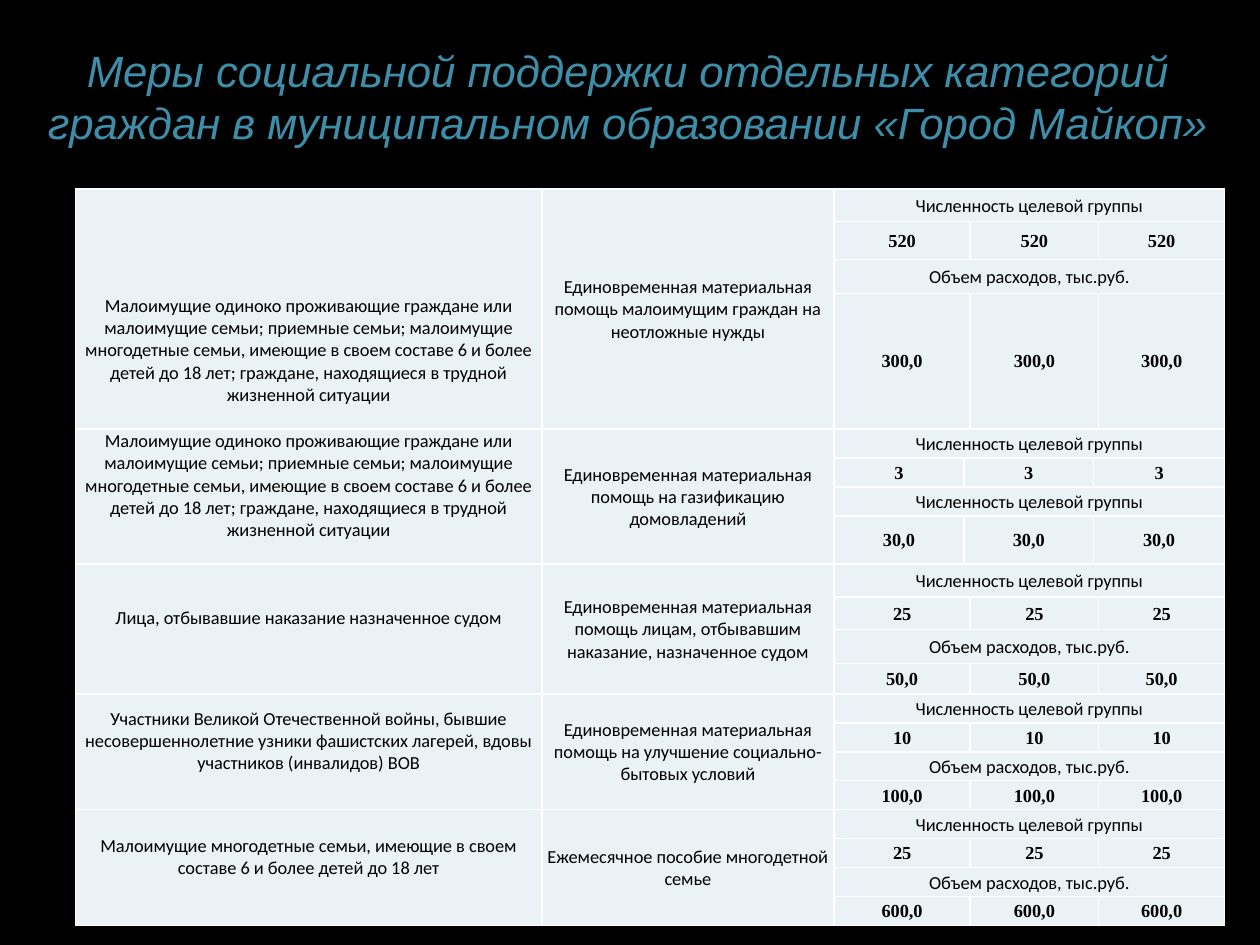
"""Build a slide with a table of social support measures in a municipality."""
from lxml import etree
from pptx import Presentation
from pptx.dml.color import RGBColor
from pptx.enum.text import MSO_ANCHOR, PP_ALIGN
from pptx.oxml.ns import qn
from pptx.util import Inches, Pt

MIDDLE, BOTTOM = MSO_ANCHOR.MIDDLE, MSO_ANCHOR.BOTTOM
CENTER = PP_ALIGN.CENTER
TITLE_ONLY = 5

COLORS = {"page": "000000", "title": "3E8EA9", "outline": "295F71",
          "cell": "EBF2F5", "border": "FFFFFF", "text": "000000"}
TITLE = ("Меры социальной поддержки отдельных категорий граждан "
         "в муниципальном образовании «Город Майкоп»")
TITLE_PLACE = {"left": 0.24, "top": 0.29, "width": 9.48, "height": 0.94}
PEOPLE = "Численность целевой группы"
COSTS = "Объем расходов, тыс.руб."
FAMILIES = ("Малоимущие одиноко проживающие граждане или малоимущие семьи; "
            "приемные семьи; малоимущие многодетные семьи, имеющие в своем "
            "составе 6 и более детей до 18 лет; граждане, находящиеся "
            "в трудной жизненной ситуации")
WIDE_FIRST = [(2, 3), (4, 5), (6, 6)]
EVEN = [(2, 2), (3, 4), (5, 6)]
YEARS = 3

MEASURES = [
    {"who": FAMILIES, "anchor": BOTTOM, "split": WIDE_FIRST,
     "aid": "Единовременная материальная помощь малоимущим граждан на неотложные нужды",
     "figures": [(PEOPLE, "520"), (COSTS, "300,0")], "rows": [0.26, 0.3, 0.27, 1.06]},
    {"who": FAMILIES, "anchor": BOTTOM, "split": EVEN,
     "aid": "Единовременная материальная помощь на газификацию домовладений",
     "figures": [(PEOPLE, "3"), (PEOPLE, "30,0")], "rows": [0.23, 0.23, 0.23, 0.37]},
    {"who": "Лица, отбывавшие наказание назначенное судом",
     "anchor": MIDDLE, "split": WIDE_FIRST,
     "aid": "Единовременная материальная помощь лицам, отбывавшим наказание, назначенное судом",
     "figures": [(PEOPLE, "25"), (COSTS, "50,0")], "rows": [0.26, 0.26, 0.27, 0.24]},
    {"who": "Участники Великой Отечественной войны, бывшие несовершеннолетние "
            "узники фашистских лагерей, вдовы участников (инвалидов) ВОВ",
     "anchor": MIDDLE, "split": WIDE_FIRST,
     "aid": "Единовременная материальная помощь на улучшение социально-бытовых условий",
     "figures": [(PEOPLE, "10"), (COSTS, "100,0")], "rows": [0.23] * 4},
    {"who": "Малоимущие многодетные семьи, имеющие в своем составе 6 и более детей до 18 лет",
     "anchor": MIDDLE, "split": WIDE_FIRST,
     "aid": "Ежемесячное пособие многодетной семье",
     "figures": [(PEOPLE, "25"), (COSTS, "600,0")], "rows": [0.23] * 4},
]
COLUMNS = [3.7, 2.32, 1.03, 0.05, 0.98, 0.04, 1]
LEFT, TOP = 0.6, 1.5
LABEL = {"name": "Calibri", "size": Pt(10.5), "bold": False}
NUMBER = {"name": "Times New Roman", "size": Pt(10.5), "bold": True}
HEADING = {"name": "Arial", "size": Pt(25), "bold": False, "italic": True}
MARGINS = {"margin_left": 0.01, "margin_right": 0.01, "margin_top": 0.01, "margin_bottom": 0}
LINE_GAP = 0.18


def write(paragraph, text, style, color):
    paragraph.alignment = CENTER
    span = paragraph.add_run()
    span.text = text
    for name, value in style.items():
        setattr(span.font, name, value)
    span.font.color.rgb = RGBColor.from_string(COLORS[color])
    return span


def add_line(parent, tag, color):
    line = etree.Element(qn(tag), w=str(Pt(1)))
    fill = etree.SubElement(line, qn("a:solidFill"))
    etree.SubElement(fill, qn("a:srgbClr"), val=COLORS[color])
    parent.append(line)
    return line


def add_title(page):
    box = page.shapes.title
    for name, value in TITLE_PLACE.items():
        setattr(box, name, Inches(value))
    frame = box.text_frame
    frame.word_wrap, frame.vertical_anchor = True, MIDDLE
    span = write(frame.paragraphs[0], TITLE, HEADING, "title")
    properties = span.font._element
    properties.insert(0, add_line(properties, "a:ln", "outline"))


def fill_cell(table, first, last, text, style=LABEL, anchor=MIDDLE, gap=0):
    cell = table.cell(*first)
    if first != last:
        cell.merge(table.cell(*last))
    for name, value in {**MARGINS, "margin_bottom": gap}.items():
        setattr(cell, name, Inches(value))
    cell.vertical_anchor = anchor
    write(cell.text_frame.paragraphs[0], text, style, "text")


def add_measures(page):
    heights = [height for measure in MEASURES for height in measure["rows"]]
    table = page.shapes.add_table(
        len(heights), len(COLUMNS), Inches(LEFT), Inches(TOP),
        Inches(sum(COLUMNS)), Inches(sum(heights))).table
    table.first_row = table.horz_banding = False
    for column, width in zip(table.columns, COLUMNS):
        column.width = Inches(width)
    for row, height in zip(table.rows, heights):
        row.height = Inches(height)
    for cell in table.iter_cells():
        properties = cell._tc.get_or_add_tcPr()
        for side in "LRTB":
            add_line(properties, f"a:ln{side}", "border")
        cell.fill.solid()
        cell.fill.fore_color.rgb = RGBColor.from_string(COLORS["cell"])

    top = 0
    for measure in MEASURES:
        bottom = top + len(measure["rows"]) - 1
        fill_cell(table, (top, 0), (bottom, 0), measure["who"],
                  anchor=measure["anchor"], gap=LINE_GAP)
        fill_cell(table, (top, 1), (bottom, 1), measure["aid"])
        for index, (label, amount) in enumerate(measure["figures"]):
            row = top + 2 * index
            fill_cell(table, (row, 2), (row, len(COLUMNS) - 1), label)
            for year in range(YEARS):
                start, end = measure["split"][year]
                fill_cell(table, (row + 1, start), (row + 1, end), amount, NUMBER)
        top = bottom + 1


def main():
    deck = Presentation()
    deck.slide_width, deck.slide_height = Inches(10), Inches(7.5)
    page = deck.slides.add_slide(deck.slide_layouts[TITLE_ONLY])
    page.background.fill.solid()
    page.background.fill.fore_color.rgb = RGBColor.from_string(COLORS["page"])
    add_title(page)
    add_measures(page)
    deck.save("out.pptx")


if __name__ == "__main__":
    main()
